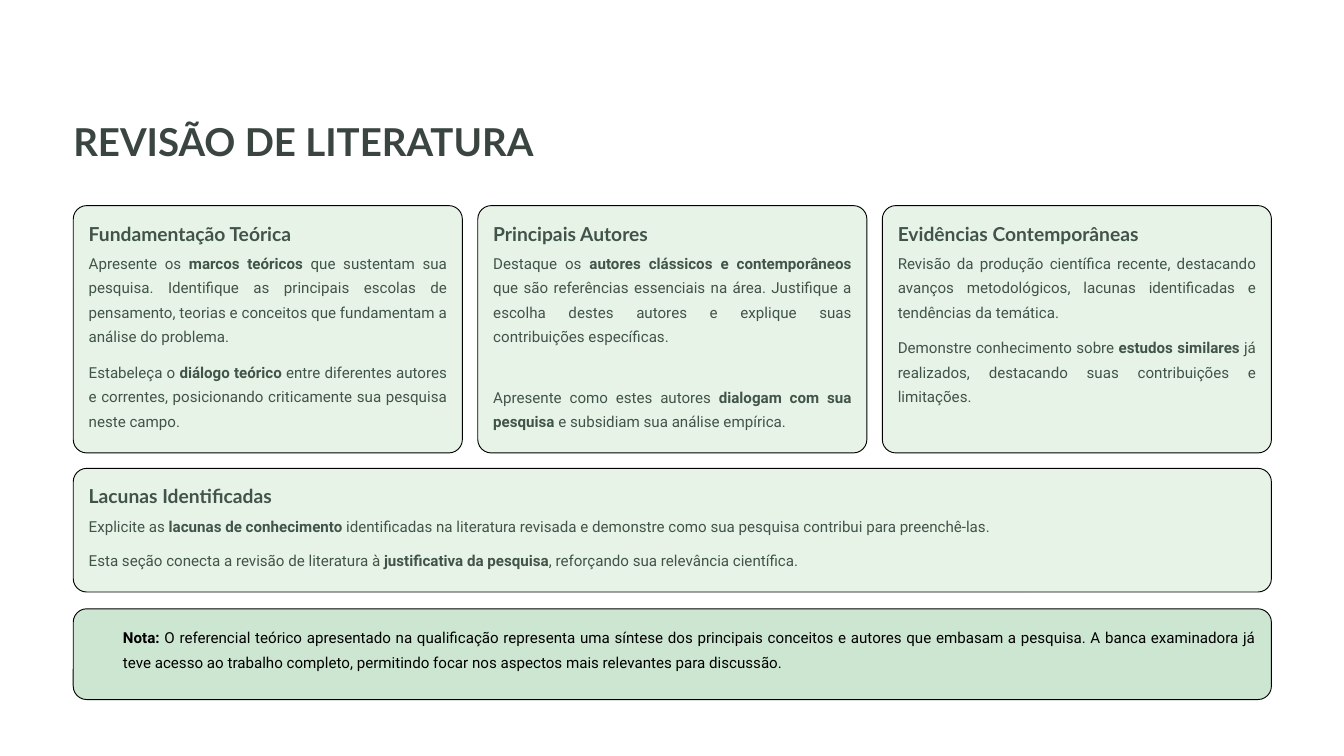
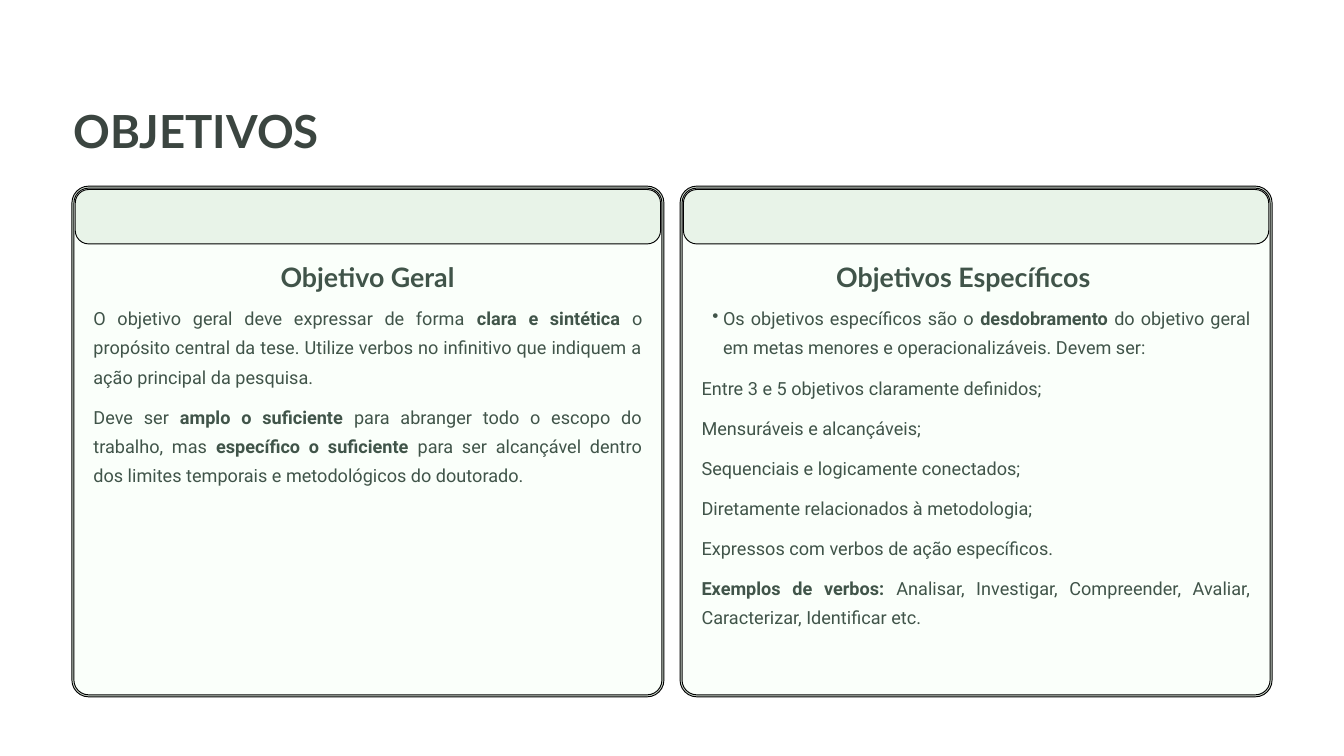
"""Builds the literature review and objectives slides of a thesis qualification deck."""
from dataclasses import dataclass
from typing import NamedTuple

from lxml import etree
from pptx import Presentation
from pptx import util as u
from pptx.dml.color import RGBColor
from pptx.enum import shapes, text
from pptx.oxml import ns


class Box(NamedTuple):
    """A region in inches."""
    left: float
    top: float
    width: float
    height: float

    def inches(self):
        """Return the region as slide lengths."""
        return [u.Inches(side) for side in self]

    def inset(self, left, top, right, bottom):
        """Return the region shrunk by the given margins."""
        return Box(self.left + left, self.top + top,
                   self.width - left - right, self.height - top - bottom)


@dataclass(frozen=True)
class TextStyle:
    """Font, size, line spacing, colour and alignment of a kind of text."""
    font: str
    size: float
    leading: float
    color: str
    bold: bool = False
    align: text.PP_ALIGN = text.PP_ALIGN.LEFT


class Theme:
    """Colours and type shared by the slides."""
    title_ink, ink, black = "3B4540", "405449", "000000"
    card, note, panel, frame = "E8F3E8", "CCE6D1", "FAFFFA", "CED9CE"
    left, content_width = 1.09, 17.83
    radius, panel_radius = 0.2, 0.25
    paragraph_gap = 11.8
    review_title = TextStyle("Lato", 41.2, 51.9, title_ink, True)
    goals_title = TextStyle("Lato", 48.8, 60.6, title_ink, True)
    card_heading = TextStyle("Lato", 20.6, 25.6, ink, True)
    panel_heading = TextStyle("Lato", 28.7, 36.2, ink, True, text.PP_ALIGN.CENTER)
    card_body = TextStyle("Roboto", 16.2, 26.2, ink, align=text.PP_ALIGN.JUSTIFY)
    note_body = TextStyle("Roboto", 16.2, 26.2, black, align=text.PP_ALIGN.JUSTIFY)
    panel_body = TextStyle("Roboto", 19.4, 31.2, ink, align=text.PP_ALIGN.JUSTIFY)


REVIEW_CARDS = [
    ("Fundamentação Teórica", [
        "Apresente os **marcos teóricos **que sustentam sua pesquisa. Identifique as principais "
        "escolas de pensamento, teorias e conceitos que fundamentam a análise do problema.",
        "Estabeleça o **diálogo teórico** entre diferentes autores e correntes, posicionando "
        "criticamente sua pesquisa neste campo."], Theme.paragraph_gap),
    ("Principais Autores", [
        "Destaque os **autores clássicos e contemporâneos** que são referências essenciais na "
        "área. Justifique a escolha destes autores e explique suas contribuições específicas.",
        "Apresente como estes autores **dialogam com sua pesquisa** e subsidiam sua análise "
        "empírica."], 38.4),
    ("Evidências Contemporâneas", [
        "Revisão da produção científica recente, destacando avanços metodológicos, lacunas "
        "identificadas e tendências da temática.",
        "Demonstre conhecimento sobre **estudos similares** já realizados, destacando suas "
        "contribuições e limitações."], Theme.paragraph_gap),
]
GAPS_CARD = ("Lacunas Identificadas", [
    "Explicite as **lacunas de conhecimento** identificadas na literatura revisada e demonstre "
    "como sua pesquisa contribui para preenchê-las.",
    "Esta seção conecta a revisão de literatura à **justificativa da pesquisa**, reforçando sua "
    "relevância científica."], 10.8)
NOTE = ("**Nota:** O referencial teórico apresentado na qualificação representa uma síntese dos "
        "principais conceitos e autores que embasam a pesquisa. A banca examinadora já teve "
        "acesso ao trabalho completo, permitindo focar nos aspectos mais relevantes para "
        "discussão.")
GENERAL_GOAL = [
    "O objetivo geral deve expressar de forma **clara e sintética** o propósito central da tese. "
    "Utilize verbos no infinitivo que indiquem a ação principal da pesquisa.",
    "Deve ser **amplo o suficiente** para abranger todo o escopo do trabalho, mas **específico o "
    "suficiente** para ser alcançável dentro dos limites temporais e metodológicos do doutorado."]
SPECIFIC_GOALS = [
    "• Os objetivos específicos são o **desdobramento** do objetivo geral em metas menores e "
    "operacionalizáveis. Devem ser:",
    "Entre 3 e 5 objetivos claramente definidos;",
    "Mensuráveis e alcançáveis;",
    "Sequenciais e logicamente conectados;",
    "Diretamente relacionados à metodologia;",
    "Expressos com verbos de ação específicos.",
    "**Exemplos de verbos:** Analisar, Investigar, Compreender, Avaliar, Caracterizar, "
    "Identificar etc."]


def add_bullet(paragraph):
    """Give a paragraph a hanging bullet."""
    paragraph.level = 1
    properties = paragraph._p.get_or_add_pPr()
    properties.set("marL", str(u.Inches(0.32)))
    properties.set("indent", str(u.Inches(-0.16)))
    etree.SubElement(properties, ns.qn("a:buChar")).set("char", "•")


def write(frame, paragraphs, style, gap=Theme.paragraph_gap):
    """Fill a text frame; ** marks bold passages and a leading • a bullet."""
    frame.word_wrap = True
    frame.auto_size = text.MSO_AUTO_SIZE.NONE
    frame.vertical_anchor = text.MSO_ANCHOR.TOP
    frame.margin_left = frame.margin_top = frame.margin_right = frame.margin_bottom = 0
    for index, wording in enumerate(paragraphs):
        paragraph = frame.add_paragraph() if index else frame.paragraphs[0]
        if wording.startswith("• "):
            add_bullet(paragraph)
            wording = wording[2:]
        paragraph.alignment = style.align
        paragraph.line_spacing = u.Pt(style.leading)
        paragraph.space_before = u.Pt(gap if index else 0)
        paragraph.font.name = style.font
        paragraph.font.size = u.Pt(style.size)
        paragraph.font.bold = style.bold
        paragraph.font.color.rgb = RGBColor.from_string(style.color)
        for position, passage in enumerate(wording.split("**")):
            if passage:
                run = paragraph.add_run()
                run.text = passage
                if position % 2:
                    run.font.bold = True


def add_text(slide, box, paragraphs, style, gap=Theme.paragraph_gap):
    """Add a text box."""
    write(slide.shapes.add_textbox(*box.inches()).text_frame, paragraphs, style, gap)


def add_rounded(slide, box, fill, radius=Theme.radius):
    """Add a thinly outlined rounded rectangle."""
    outline = slide.shapes.add_shape(shapes.MSO_SHAPE.ROUNDED_RECTANGLE, *box.inches())
    outline.adjustments[0] = radius / min(box.width, box.height)
    outline.shadow.inherit = False
    outline.fill.solid()
    outline.fill.fore_color.rgb = RGBColor.from_string(fill)
    outline.line.color.rgb = RGBColor.from_string(Theme.black)
    outline.line.width = u.Pt(1)


def add_titled_slide(deck, title, box, style):
    """Add a title-only slide with its title in the given box."""
    slide = deck.slides.add_slide(deck.slide_layouts[5])
    heading = slide.shapes.title
    heading.left, heading.top, heading.width, heading.height = box.inches()
    write(heading.text_frame, [title], style)
    return slide


def add_card(slide, box, heading, paragraphs, gap):
    """Add a card with a heading above its paragraphs."""
    add_rounded(slide, box, Theme.card)
    inner = box.inset(0.23, 0.23, 0.23, 0.23)
    add_text(slide, inner._replace(height=0.36), [heading], Theme.card_heading)
    add_text(slide, inner.inset(0, 0.4, 0, 0), paragraphs, Theme.card_body, gap)


def add_note(slide, box, note):
    """Add the darker note strip."""
    add_rounded(slide, box, Theme.note)
    add_text(slide, box.inset(0.74, 0.2, 0.24, 0.42), [note], Theme.note_body)


def add_panel(slide, box, heading, heading_left, heading_width, paragraphs):
    """Add a double-framed panel with a header band, heading and paragraphs."""
    add_rounded(slide, box, Theme.frame, Theme.panel_radius)
    add_rounded(slide, box.inset(0.03, 0.03, 0.03, 0.03), Theme.panel, Theme.panel_radius - 0.03)
    add_rounded(slide, box.inset(0.05, 0.05, 0.05, 0)._replace(height=0.81), Theme.card)
    add_text(slide, Box(box.left + heading_left, box.top + 1.08, heading_width, 0.49),
             [heading], Theme.panel_heading)
    add_text(slide, box.inset(0.32, 1.7, 0.32, 0.3), paragraphs, Theme.panel_body)


def build_review(deck):
    """Build the literature review slide."""
    slide = add_titled_slide(deck, "REVISÃO DE LITERATURA",
                             Box(Theme.left, 1.72, 8.04, 0.74), Theme.review_title)
    gutter = 0.23
    width = (Theme.content_width - 2 * gutter) / 3
    for column, card in enumerate(REVIEW_CARDS):
        left = Theme.left + column * (width + gutter)
        add_card(slide, Box(left, 3.06, width, 3.68), *card)
    add_card(slide, Box(Theme.left, 6.97, Theme.content_width, 1.84), *GAPS_CARD)
    add_note(slide, Box(Theme.left, 9.06, Theme.content_width, 1.35), NOTE)


def build_goals(deck):
    """Build the objectives slide."""
    slide = add_titled_slide(deck, "OBJETIVOS",
                             Box(Theme.left, 1.51, 6.78, 0.87), Theme.goals_title)
    general = Box(1.07, 2.77, 8.81, 7.6)
    specific = general._replace(left=general.left + general.width + 0.24)
    add_panel(slide, general, "Objetivo Geral", 2.96, 2.88, GENERAL_GOAL)
    add_panel(slide, specific, "Objetivos Específicos", 1.97, 4.49, SPECIFIC_GOALS)


def main():
    """Build and save the deck."""
    deck = Presentation()
    deck.slide_width, deck.slide_height = u.Inches(20), u.Inches(11.25)
    build_review(deck)
    build_goals(deck)
    deck.save("out.pptx")


if __name__ == "__main__":
    main()
